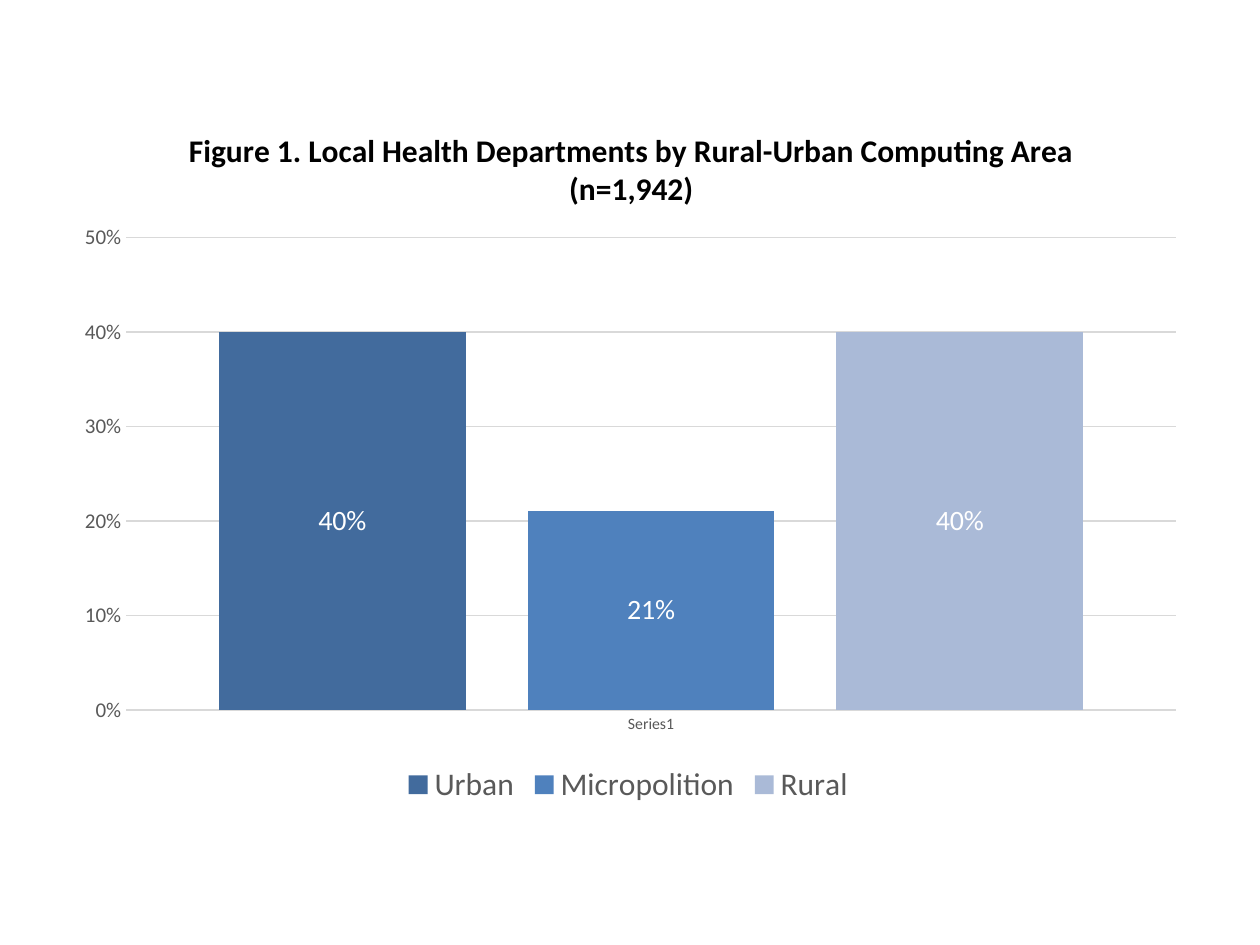
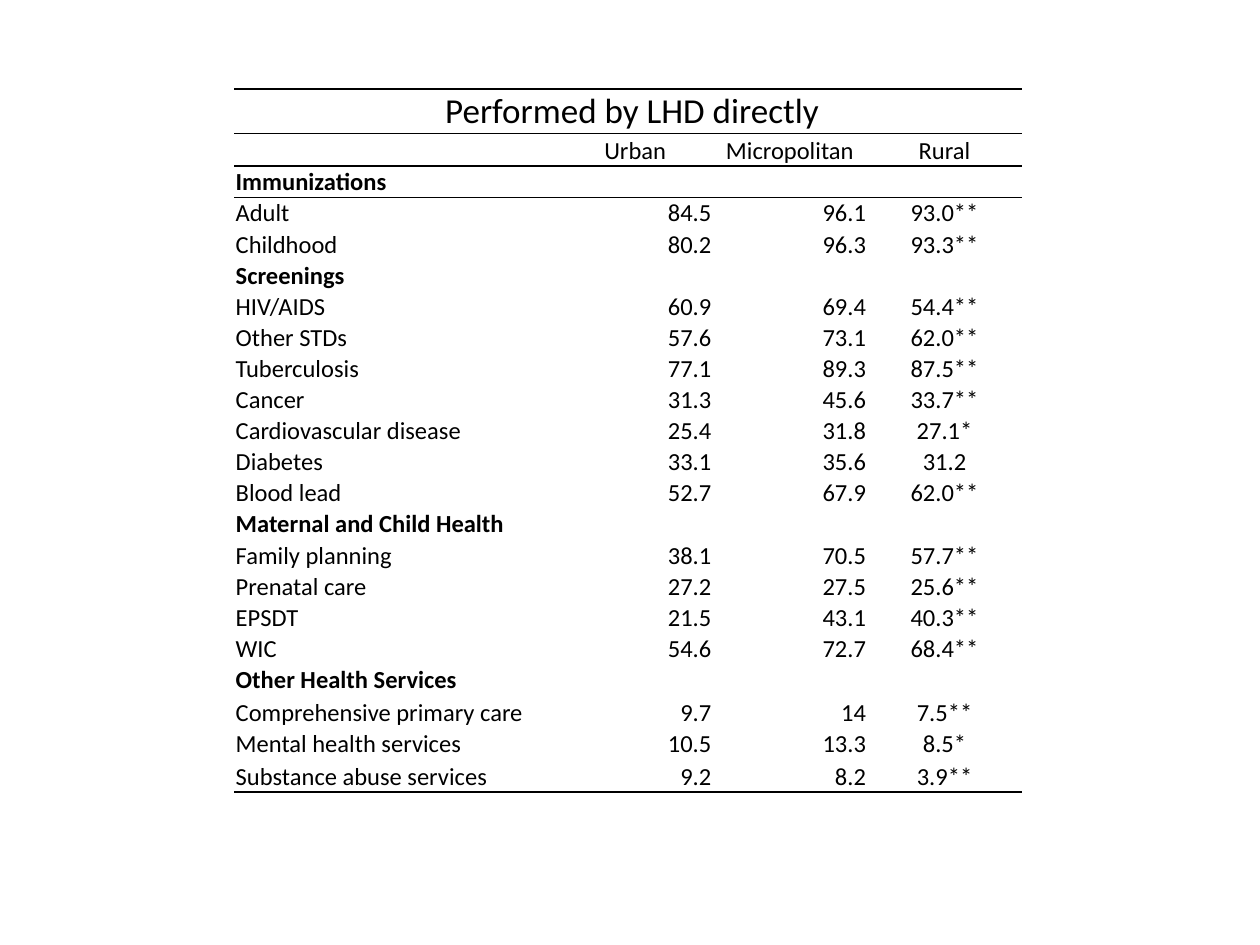
from lxml import etree
from pptx import Presentation
from pptx.chart.data import CategoryChartData
from pptx.dml.color import RGBColor
from pptx.enum import chart as charts, text
from pptx.oxml.ns import qn
from pptx.util import Pt

FONT = "Calibri"
BLACK, WHITE, GREY, PALE = "000000", "FFFFFF", "595959", "D9D9D9"
LEFT, CENTER, RIGHT = text.PP_ALIGN.LEFT, text.PP_ALIGN.CENTER, text.PP_ALIGN.RIGHT
NO_STYLE = "{2D5ABB26-0587-4C30-8999-92F81FD0307C}"

AREAS = [("Urban", 0.40, "426B9D"), ("Micropolition", 0.21, "4F81BD"), ("Rural", 0.40, "AABAD7")]

SERVICES = [
    ("Immunizations",),
    ("Adult", "84.5", "96.1", "93.0**"),
    ("Childhood", "80.2", "96.3", "93.3**"),
    ("Screenings",),
    ("HIV/AIDS", "60.9", "69.4", "54.4**"),
    ("Other STDs", "57.6", "73.1", "62.0**"),
    ("Tuberculosis", "77.1", "89.3", "87.5**"),
    ("Cancer", "31.3", "45.6", "33.7**"),
    ("Cardiovascular disease", "25.4", "31.8", "27.1*"),
    ("Diabetes", "33.1", "35.6", "31.2"),
    ("Blood lead", "52.7", "67.9", "62.0**"),
    ("Maternal and Child Health",),
    ("Family planning", "38.1", "70.5", "57.7**"),
    ("Prenatal care", "27.2", "27.5", "25.6**"),
    ("EPSDT", "21.5", "43.1", "40.3**"),
    ("WIC", "54.6", "72.7", "68.4**"),
    ("Other Health Services",),
    ("Comprehensive primary care", "9.7", "14", "7.5**"),
    ("Mental health services", "10.5", "13.3", "8.5*"),
    ("Substance abuse services", "9.2", "8.2", "3.9**"),
]


def rgb(color):
    return RGBColor.from_string(color)


def style(font, size, color=BLACK, bold=False):
    font.name = FONT
    font.size = Pt(size)
    font.bold = bold
    font.color.rgb = rgb(color)


def write(tf, content, size=14, color=BLACK, bold=False, align=LEFT):
    p = tf.paragraphs[0]
    p.alignment = align
    if content:
        r = p.add_run()
        r.text = content
        style(r.font, size, color, bold)
    else:
        p._p.get_or_add_endParaRPr().set("sz", str(size * 100))


def place(parent, index, **fractions):
    layout = parent.find(qn("c:layout"))
    if layout is None:
        layout = etree.Element(qn("c:layout"))
        parent.insert(index, layout)
    manual = etree.SubElement(layout, qn("c:manualLayout"))
    if "w" in fractions:
        etree.SubElement(manual, qn("c:layoutTarget")).set("val", "inner")
    for axis in "xy":
        etree.SubElement(manual, qn(f"c:{axis}Mode")).set("val", "edge")
    for key, value in fractions.items():
        etree.SubElement(manual, qn(f"c:{key}")).set("val", str(value))


def rule(cell, edges):
    tc_pr = cell._tc.get_or_add_tcPr()
    for i, edge in enumerate(edges):
        ln = etree.Element(qn(f"a:ln{edge}"), w=str(Pt(1)))
        fill = etree.SubElement(ln, qn("a:solidFill"))
        etree.SubElement(fill, qn("a:srgbClr")).set("val", BLACK)
        tc_pr.insert(i, ln)


def area_chart(slide, x, y, w, h):
    data = CategoryChartData(number_format="0%")
    data.categories = ["Series1"]
    for name, share, _ in AREAS:
        data.add_series(name, [share])
    chart = slide.shapes.add_chart(
        charts.XL_CHART_TYPE.COLUMN_CLUSTERED, Pt(x), Pt(y), Pt(w), Pt(h), data).chart
    style(chart.font, 10)

    chart.has_title = True
    title = chart.chart_title
    write(title.text_frame, "Figure 1. Local Health Departments by Rural-Urban Computing Area (n=1,942)",
          size=18, bold=True, align=CENTER)
    title.include_in_layout = False
    place(title._element, 1, x=0.11, y=0.04)
    place(chart._chartSpace.chart.plotArea, 0, x=0.06, y=0.2, w=0.92, h=0.66)

    chart.has_legend = True
    chart.legend.position = charts.XL_LEGEND_POSITION.BOTTOM
    chart.legend.include_in_layout = False
    style(chart.legend.font, 18, GREY)

    for axis, size in ((chart.category_axis, 9), (chart.value_axis, 12)):
        axis.major_tick_mark = axis.minor_tick_mark = charts.XL_TICK_MARK.NONE
        style(axis.tick_labels.font, size, GREY)
    values = chart.value_axis
    values.minimum_scale, values.maximum_scale, values.major_unit = 0, 0.5, 0.1
    values.tick_labels.number_format = "0%"
    values.tick_labels.number_format_is_linked = False
    values.format.line.fill.background()
    for line in (chart.category_axis.format.line, values.major_gridlines.format.line):
        line.color.rgb = rgb(PALE)
        line.width = Pt(0.75)

    plot = chart.plots[0]
    plot.gap_width, plot.overlap, plot.vary_by_categories = 75, -25, False
    for series, (_, _, color) in zip(plot.series, AREAS):
        series.format.fill.solid()
        series.format.fill.fore_color.rgb = rgb(color)
        labels = series.data_labels
        labels.show_value = True
        labels.position = charts.XL_LABEL_POSITION.CENTER
        labels.number_format = "0%"
        labels.number_format_is_linked = False
        style(labels.font, 16, WHITE)


def services_table(slide, x, y, w, h):
    rows = [("\N{NO-BREAK SPACE}Performed by LHD directly",), ("", "Urban", "Micropolitan", "Rural"), *SERVICES]
    last = len(rows) - 1
    edges = {0: "TB", 1: "TB", 2: "T", last: "B"}
    heights = {0: 25.2, 1: 18.8, last - 2: 18.8, last: 18.8}
    plain = (h - sum(heights.values())) / (len(rows) - len(heights))
    table = slide.shapes.add_table(len(rows), 4, Pt(x), Pt(y), Pt(w), Pt(h)).table
    table.first_row = table.horz_banding = False
    table._tbl.tblPr.find(qn("a:tableStyleId")).text = NO_STYLE

    number_width = 88.4
    for i, column in enumerate(table.columns):
        column.width = Pt(number_width if i else w - 3 * number_width)
    for i, row in enumerate(rows):
        table.rows[i].height = Pt(heights.get(i, plain))
        aligns = (CENTER,) * 4 if i < 2 else (LEFT, RIGHT, RIGHT, CENTER)
        for j, align in enumerate(aligns):
            cell = table.cell(i, j)
            cell.fill.background()
            cell.vertical_anchor = text.MSO_ANCHOR.BOTTOM
            cell.margin_left = cell.margin_right = cell.margin_top = Pt(0.7)
            cell.margin_bottom = 0
            write(cell.text_frame, row[j] if j < len(row) else "", size=14 if i else 20,
                  bold=i > 1 and len(row) == 1, align=align)
            rule(cell, edges.get(i, ""))
    table.cell(0, 0).merge(table.cell(0, 3))


def main():
    prs = Presentation()
    prs.slide_width, prs.slide_height = Pt(720), Pt(540)
    blank = prs.slide_layouts[6]
    area_chart(prs.slides.add_slide(blank), 33, 54, 652, 409)
    services_table(prs.slides.add_slide(blank), 134, 51, 450, 402)
    prs.save("out.pptx")


if __name__ == "__main__":
    main()
